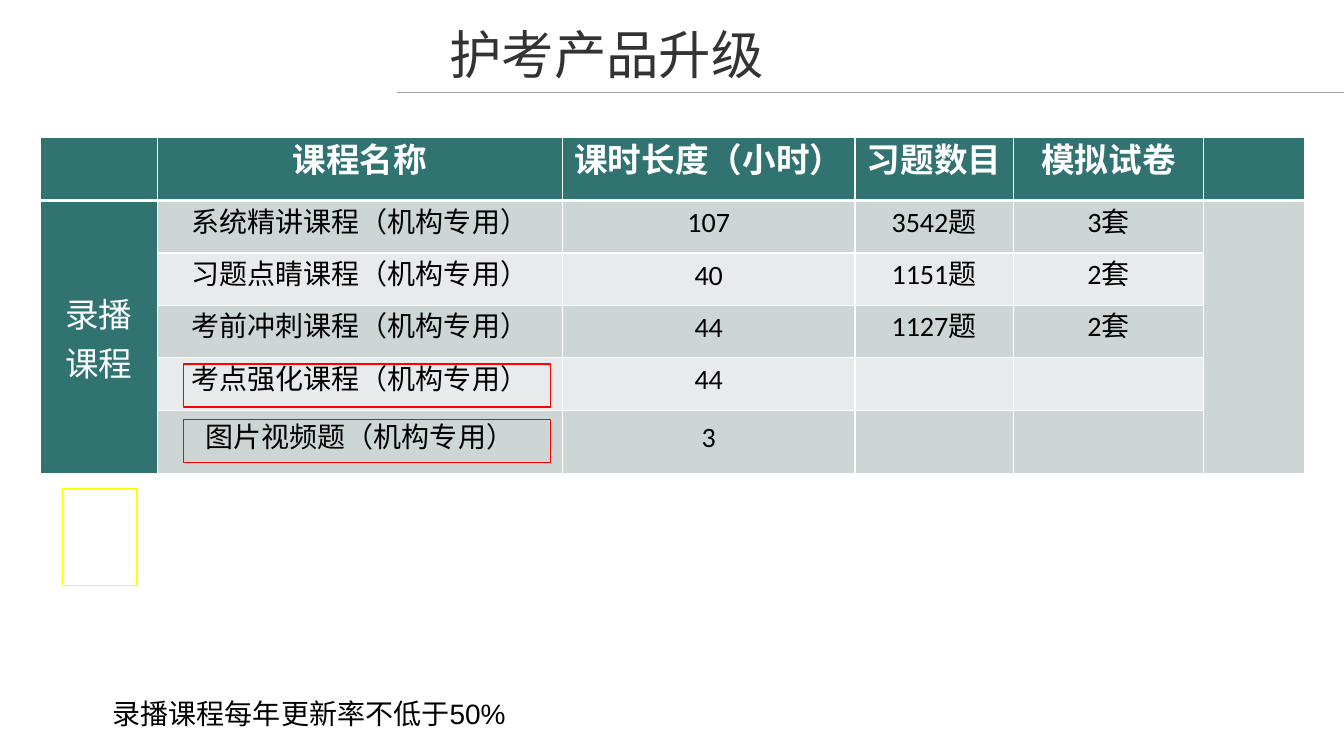
from dataclasses import dataclass
from typing import Optional

from lxml.etree import SubElement
from pptx import Presentation
from pptx.dml.color import RGBColor
from pptx.enum.shapes import MSO_CONNECTOR, MSO_SHAPE
from pptx.enum.text import MSO_ANCHOR, PP_ALIGN
from pptx.oxml.ns import qn
from pptx.slide import Slide
from pptx.table import _Cell
from pptx.text.text import TextFrame
from pptx.util import Inches, Pt


@dataclass(frozen=True)
class Theme:
    teal: str = "307371"
    band_dark: str = "CDD5D5"
    band_light: str = "E8EBEB"
    white: str = "FFFFFF"
    black: str = "000000"
    title: str = "333333"
    rule: str = "9F9F9F"
    red: str = "FF0000"
    yellow: str = "FFFF00"
    title_size: float = 37.4
    header_size: float = 24
    body_size: float = 20
    latin: str = "Arial"
    figures: str = "Calibri"
    chinese: str = "Noto Sans CJK SC"


@dataclass(frozen=True)
class Style:
    font: str
    size: float
    color: str
    bold: bool = False
    line_pitch: Optional[float] = None


@dataclass(frozen=True)
class Box:
    left: float
    top: float
    width: float
    height: float

    def lengths(self) -> list[Inches]:
        return [Inches(v) for v in (self.left, self.top, self.width, self.height)]


@dataclass(frozen=True)
class Frame:
    box: Box
    color: str


THEME = Theme()
TITLE = Style(THEME.chinese, THEME.title_size, THEME.title)
NOTE = Style(THEME.latin, THEME.body_size, THEME.black)
HEADER = Style(THEME.latin, THEME.header_size, THEME.white, True, 19.2)
CATEGORY = Style(THEME.figures, THEME.header_size, THEME.white)
COURSE = Style(THEME.latin, THEME.body_size, THEME.black, False, 19.2)
FIGURE = Style(THEME.figures, THEME.body_size, THEME.black, False, 19.2)

COLUMN_WIDTHS = [1.16, 4.02, 2.9, 1.57, 1.89, 1]
ROW_HEIGHTS = [0.63, 0.52, 0.52, 0.52, 0.52, 0.63]
COURSES = [
    ["", "课程名称", "课时长度（小时）", "习题数目", "模拟试卷", ""],
    ["录播课程", "系统精讲课程（机构专用）", "107", "3542题", "3套", ""],
    ["", "习题点睛课程（机构专用）", "40", "1151题", "2套", ""],
    ["", "考前冲刺课程（机构专用）", "44", "1127题", "2套", ""],
    ["", "考点强化课程（机构专用）", "44", "", "", ""],
    ["", "图片视频题（机构专用）", "3", "", "", ""],
]
FRAMES = [
    Frame(Box(1.82, 3.61, 3.64, 0.43), THEME.red),
    Frame(Box(1.82, 4.16, 3.64, 0.43), THEME.red),
    Frame(Box(0.62, 4.85, 0.74, 0.96), THEME.yellow),
]


def write(text_frame: TextFrame, text: str, style: Style) -> None:
    text_frame.text = text
    paragraph = text_frame.paragraphs[0]
    if style.line_pitch:
        paragraph.line_spacing = Pt(style.line_pitch)
    for run in paragraph.runs:
        run.font.size = Pt(style.size)
        run.font.bold = style.bold
        run.font.color.rgb = RGBColor.from_string(style.color)
        run.font.name = style.font
        east_asian = SubElement(run.font._element, qn("a:ea"))
        east_asian.set("typeface", THEME.chinese)


def add_text(slide: Slide, box: Box, text: str, style: Style) -> None:
    text_frame = slide.shapes.add_textbox(*box.lengths()).text_frame
    text_frame.word_wrap = True
    text_frame.vertical_anchor = MSO_ANCHOR.MIDDLE
    write(text_frame, text, style)


def add_rule(slide: Slide, left: float, right: float, top: float) -> None:
    rule = slide.shapes.add_connector(
        MSO_CONNECTOR.STRAIGHT, Inches(left), Inches(top), Inches(right), Inches(top)
    )
    rule.line.color.rgb = RGBColor.from_string(THEME.rule)
    rule.line.width = Pt(0.5)
    SubElement(rule._element.spPr, qn("a:effectLst"))


def add_frame(slide: Slide, frame: Frame) -> None:
    outline = slide.shapes.add_shape(MSO_SHAPE.RECTANGLE, *frame.box.lengths())
    outline.shadow.inherit = False
    outline.fill.background()
    outline.line.color.rgb = RGBColor.from_string(frame.color)
    outline.line.width = Pt(1)


def border(cell: _Cell, row: int) -> None:
    widths = {"L": 1, "R": 1, "T": 3 if row == 1 else 1, "B": 3 if row == 0 else 1}
    properties = cell._tc.get_or_add_tcPr()
    for side, width in widths.items():
        edge = SubElement(properties, qn(f"a:ln{side}"), w=str(Pt(width)))
        fill = SubElement(edge, qn("a:solidFill"))
        SubElement(fill, qn("a:srgbClr"), val=THEME.white)


def cell_look(row: int, column: int) -> tuple[Style, str]:
    if row == 0:
        return HEADER, THEME.teal
    if column == 0:
        return CATEGORY, THEME.teal
    band = THEME.band_dark if row % 2 else THEME.band_light
    return (COURSE if column == 1 else FIGURE), band


def add_courses(slide: Slide, left: float, top: float) -> None:
    box = Box(left, top, sum(COLUMN_WIDTHS), sum(ROW_HEIGHTS))
    table = slide.shapes.add_table(
        len(ROW_HEIGHTS), len(COLUMN_WIDTHS), *box.lengths()
    ).table
    for column, width in zip(table.columns, COLUMN_WIDTHS):
        column.width = Inches(width)
    for row, height in zip(table.rows, ROW_HEIGHTS):
        row.height = Inches(height)
    for r, texts in enumerate(COURSES):
        for c, text in enumerate(texts):
            cell = table.cell(r, c)
            style, color = cell_look(r, c)
            border(cell, r)
            cell.fill.solid()
            cell.fill.fore_color.rgb = RGBColor.from_string(color)
            cell.vertical_anchor = MSO_ANCHOR.MIDDLE
            cell.margin_left = cell.margin_right = Inches(0.09)
            cell.margin_top = cell.margin_bottom = 0
            if text:
                write(cell.text_frame, text, style)
                cell.text_frame.paragraphs[0].alignment = PP_ALIGN.CENTER
    last_row = len(ROW_HEIGHTS) - 1
    for c in (0, len(COLUMN_WIDTHS) - 1):
        table.cell(1, c).merge(table.cell(last_row, c))


def main() -> None:
    presentation = Presentation()
    presentation.slide_width = Inches(13.33)
    presentation.slide_height = Inches(7.5)
    slide = presentation.slides.add_slide(presentation.slide_layouts[6])
    add_text(slide, Box(4.36, 0.18, 5.8, 0.71), "护考产品升级", TITLE)
    add_rule(slide, 3.94, 13.33, 0.92)
    add_courses(slide, 0.4, 1.36)
    for frame in FRAMES:
        add_frame(slide, frame)
    add_text(slide, Box(1.02, 6.86, 6.67, 0.44), "录播课程每年更新率不低于50%", NOTE)
    presentation.save("out.pptx")


if __name__ == "__main__":
    main()
